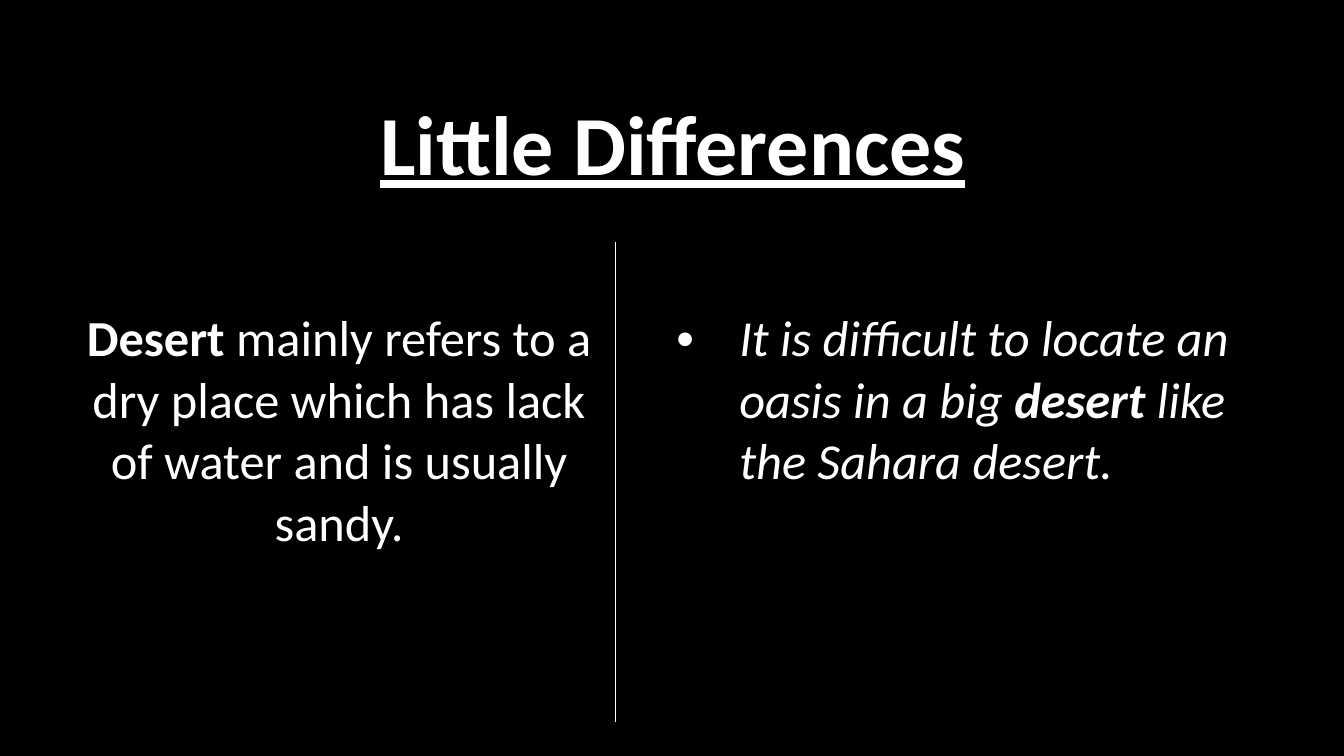
from lxml import etree
from pptx import Presentation
from pptx.dml.color import RGBColor
from pptx.enum.text import PP_ALIGN
from pptx.oxml.ns import qn
from pptx.util import Pt

CENTER, LEFT = PP_ALIGN.CENTER, PP_ALIGN.LEFT
BLACK = RGBColor(0, 0, 0)
WHITE = RGBColor(255, 255, 255)
FONT = "Calibri"

# Content: each cell holds spans of (text, format)
TITLE = [("Little Differences", {"size": Pt(60), "bold": True, "underline": True})]
MEANING = [
    ("Desert", {"bold": True}),
    (" mainly refers to a dry place which has lack of water and is usually sandy.", {}),
]
EXAMPLE = [
    ("It is difficult to locate an oasis in a big ", {"italic": True}),
    ("desert", {"italic": True, "bold": True}),
    (" like the Sahara desert.", {"italic": True}),
]

# Layout in points
TABLE_LEFT, TABLE_TOP = 44.6, 20.9
COLUMNS = [395.3, 476.6]
ROWS = [152, 342.7]
TEXT_TOP = 47.5
BULLET_MARGIN, BULLET_INDENT = 81, -45

BASE_FORMAT = {"name": FONT, "size": Pt(36), "bold": False}


def fill_cell(cell, spans, alignment):
    """Write formatted spans into one cell."""
    cell.margin_top = Pt(TEXT_TOP)
    para = cell.text_frame.paragraphs[0]
    para.alignment = alignment
    for text, style in spans:
        span = para.add_run()
        span.text = text
        for name, value in {**BASE_FORMAT, **style}.items():
            setattr(span.font, name, value)
        span.font.color.rgb = WHITE
    return para


def set_borders(cell, white_side):
    """Draw one white side, if any, and clear the others."""
    properties = cell._tc.get_or_add_tcPr()
    for side in "LRTB":
        line = etree.SubElement(properties, qn("a:ln" + side), w=str(Pt(1)))
        if side == white_side:
            solid = etree.SubElement(line, qn("a:solidFill"))
            etree.SubElement(solid, qn("a:srgbClr"), val=str(WHITE))
        else:
            etree.SubElement(line, qn("a:noFill"))


def add_bullet(para):
    properties = para._p.get_or_add_pPr()
    properties.set("lvl", "1")
    properties.set("marL", str(Pt(BULLET_MARGIN)))
    properties.set("indent", str(Pt(BULLET_INDENT)))
    color = etree.SubElement(properties, qn("a:buClr"))
    etree.SubElement(color, qn("a:srgbClr"), val=str(WHITE))
    etree.SubElement(properties, qn("a:buFont"), typeface="Arial")
    etree.SubElement(properties, qn("a:buChar"), char="•")


def main():
    # Page
    deck = Presentation()
    deck.slide_width, deck.slide_height = Pt(960), Pt(540)
    page = deck.slides.add_slide(deck.slide_layouts[6])
    page.background.fill.solid()
    page.background.fill.fore_color.rgb = BLACK

    # Table grid
    table = page.shapes.add_table(
        len(ROWS), len(COLUMNS), Pt(TABLE_LEFT), Pt(TABLE_TOP),
        Pt(sum(COLUMNS)), Pt(sum(ROWS))).table
    table.first_row = table.horz_banding = False
    for column, width in zip(table.columns, COLUMNS):
        column.width = Pt(width)
    for row, height in zip(table.rows, ROWS):
        row.height = Pt(height)

    # Divider between the two lower cells
    title, meaning, example = table.cell(0, 0), table.cell(1, 0), table.cell(1, 1)
    title.merge(table.cell(0, 1))
    sides = [None, None, "R", "L"]
    for cell, white_side in zip(table.iter_cells(), sides):
        set_borders(cell, white_side)
        cell.fill.background()

    # Text
    fill_cell(title, TITLE, CENTER)
    fill_cell(meaning, MEANING, CENTER)
    add_bullet(fill_cell(example, EXAMPLE, LEFT))

    deck.save("out.pptx")


if __name__ == "__main__":
    main()
